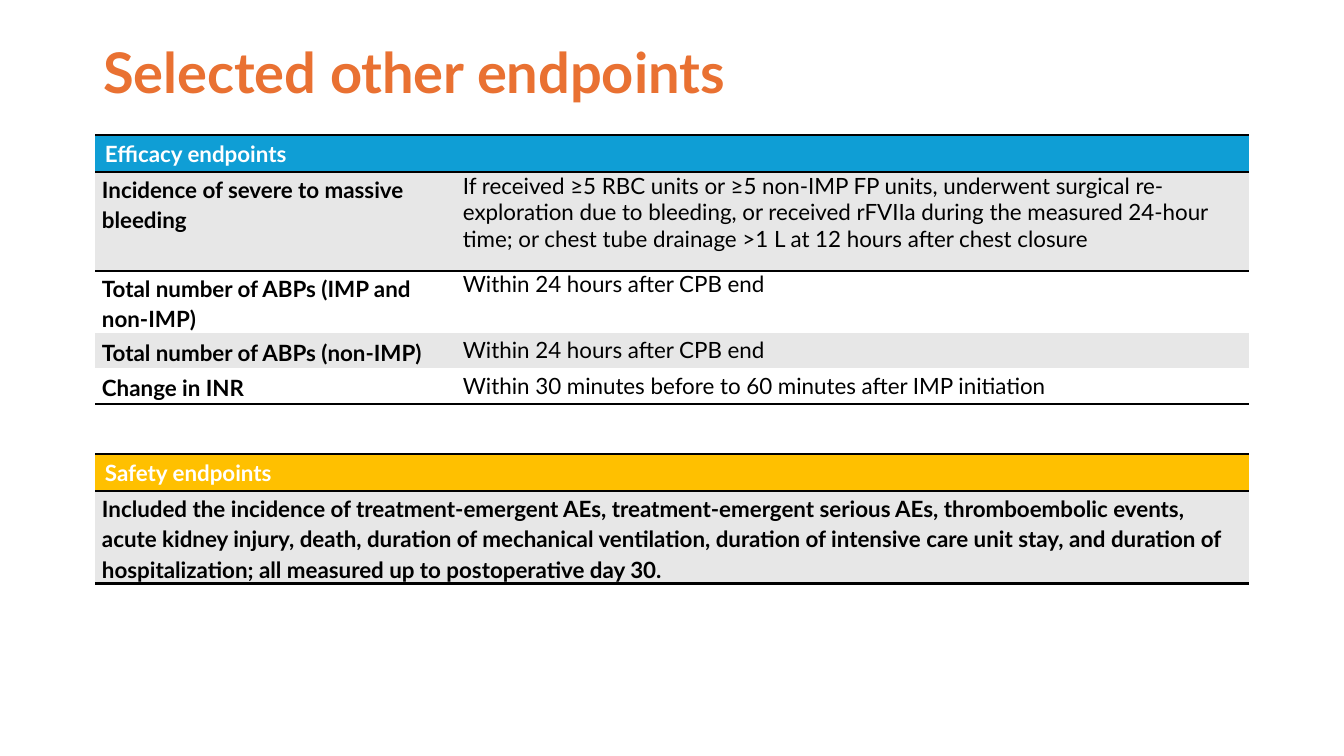
from lxml import etree
from pptx import Presentation
from pptx.dml.color import RGBColor
from pptx.enum.text import MSO_ANCHOR
from pptx.oxml.ns import qn
from pptx.util import Pt

EMU_PER_PX = 914400 / 100.8
TOP, MIDDLE = MSO_ANCHOR.TOP, MSO_ANCHOR.MIDDLE
TITLE_ONLY = 5
PLAIN_TABLE = "{2D5ABB26-0587-4C30-8999-92F81FD0307C}"
ORANGE, BLUE, GOLD = "E97132", "0F9ED5", "FFC000"
GREY, WHITE, BLACK = "E7E7E7", "FFFFFF", "000000"


def px(n):
    return round(n * EMU_PER_PX)


def rgb(value):
    return RGBColor.from_string(value)


class Deck:
    font = "Lato"
    body_size = 16
    rule_width = 2

    def __init__(self):
        self.prs = Presentation()
        self.prs.slide_width, self.prs.slide_height = px(1344), px(756)
        self.s = self.prs.slides.add_slide(self.prs.slide_layouts[TITLE_ONLY])

    def run(self, p, text, size, color, bold):
        r = p.add_run()
        r.text = text
        r.font.name, r.font.size, r.font.bold = self.font, Pt(size), bold
        r.font.color.rgb = rgb(color)

    def title(self, text, x, y, w, h):
        sp = self.s.shapes.title
        sp.left, sp.top, sp.width, sp.height = px(x), px(y), px(w), px(h)
        tf = sp.text_frame
        tf.word_wrap, tf.vertical_anchor = True, TOP
        p = tf.paragraphs[0]
        p.alignment = 1
        p.line_spacing = 0.9
        self.run(p, text, 40, ORANGE, True)

    def table(self, x, y, cols, rows):
        frame = self.s.shapes.add_table(
            len(rows), len(cols), px(x), px(y), px(sum(cols)), px(sum(rows)))
        table = frame.table
        table.first_row = table.horz_banding = False
        frame._element.find(".//" + qn("a:tableStyleId")).text = PLAIN_TABLE
        for column, width in zip(table.columns, cols):
            column.width = px(width)
        for row, height in zip(table.rows, rows):
            row.height = px(height)
        # Rules above and below the header, and below the last row
        last = len(rows) - 1
        for i, row in enumerate(table.rows):
            for cell in row.cells:
                cell.margin_top = cell.margin_bottom = 0
                self.rules(cell, (["lnT"] if i < 2 else [])
                           + (["lnB"] if i in (0, last) else []))
        return table

    def rules(self, cell, sides):
        tc_pr = cell._tc.get_or_add_tcPr()
        for side in sides:
            ln = etree.SubElement(tc_pr, qn("a:" + side), w=str(Pt(self.rule_width)))
            fill = etree.SubElement(ln, qn("a:solidFill"))
            etree.SubElement(fill, qn("a:srgbClr"), val=BLACK)

    def fill_row(self, table, i, color):
        for cell in table.rows[i].cells:
            cell.fill.solid()
            cell.fill.fore_color.rgb = rgb(color)

    def cell(self, cell, text, color=BLACK, bold=True, anchor=TOP,
             inset=(7, 0), loose=True):
        cell.margin_left = cell.margin_right = px(inset[0])
        cell.margin_top = cell.margin_bottom = px(inset[1])
        cell.vertical_anchor = anchor
        p = cell.text_frame.paragraphs[0]
        if loose:
            p.line_spacing, p.space_after = 1.15, Pt(10)
        self.run(p, text, self.body_size, color, bold)

    def header(self, table, text, color):
        self.fill_row(table, 0, color)
        self.cell(table.cell(0, 0), text, WHITE, anchor=MIDDLE,
                  inset=(10, 5), loose=False)


# Name, name anchor, definition, definition anchor, loose definition spacing
EFFICACY = [
    ("Incidence of severe to massive bleeding", TOP,
     "If received ≥5 RBC units or ≥5 non-IMP FP units, underwent surgical "
     "re-exploration due to bleeding, or received rFVIIa during the measured "
     "24-hour time; or chest tube drainage >1 L at 12 hours after chest closure",
     TOP, False),
    ("Total number of ABPs (IMP and non-IMP)", TOP,
     "Within 24 hours after CPB end", TOP, False),
    ("Total number of ABPs (non-IMP)", MIDDLE,
     "Within 24 hours after CPB end", TOP, True),
    ("Change in INR", MIDDLE,
     "Within 30 minutes before to 60 minutes after IMP initiation", MIDDLE, False),
]
SAFETY = (
    "Included the incidence of treatment-emergent AEs, treatment-emergent serious "
    "AEs, thromboembolic events, acute kidney injury, death, duration of mechanical "
    "ventilation, duration of intensive care unit stay, and duration of "
    "hospitalization; all measured up to postoperative day 30.")
COLUMNS = (361, 793)


def main():
    deck = Deck()
    deck.title("Selected other endpoints", 93, 40, 1159, 146)

    # Efficacy table
    efficacy = deck.table(95, 135, COLUMNS, (37, 99, 62, 35, 36))
    deck.header(efficacy, "Efficacy endpoints", BLUE)
    for i, (name, name_anchor, text, anchor, loose) in enumerate(EFFICACY, 1):
        deck.fill_row(efficacy, i, GREY if i % 2 else WHITE)
        deck.cell(efficacy.cell(i, 0), name, anchor=name_anchor)
        deck.cell(efficacy.cell(i, 1), text, bold=False, anchor=anchor, loose=loose)

    # Safety table
    safety = deck.table(95, 454, COLUMNS, (37, 92))
    deck.header(safety, "Safety endpoints", GOLD)
    deck.fill_row(safety, 1, GREY)
    safety.cell(1, 0).merge(safety.cell(1, 1))
    deck.cell(safety.cell(1, 0), SAFETY, anchor=MIDDLE)

    deck.prs.save("out.pptx")


if __name__ == "__main__":
    main()
